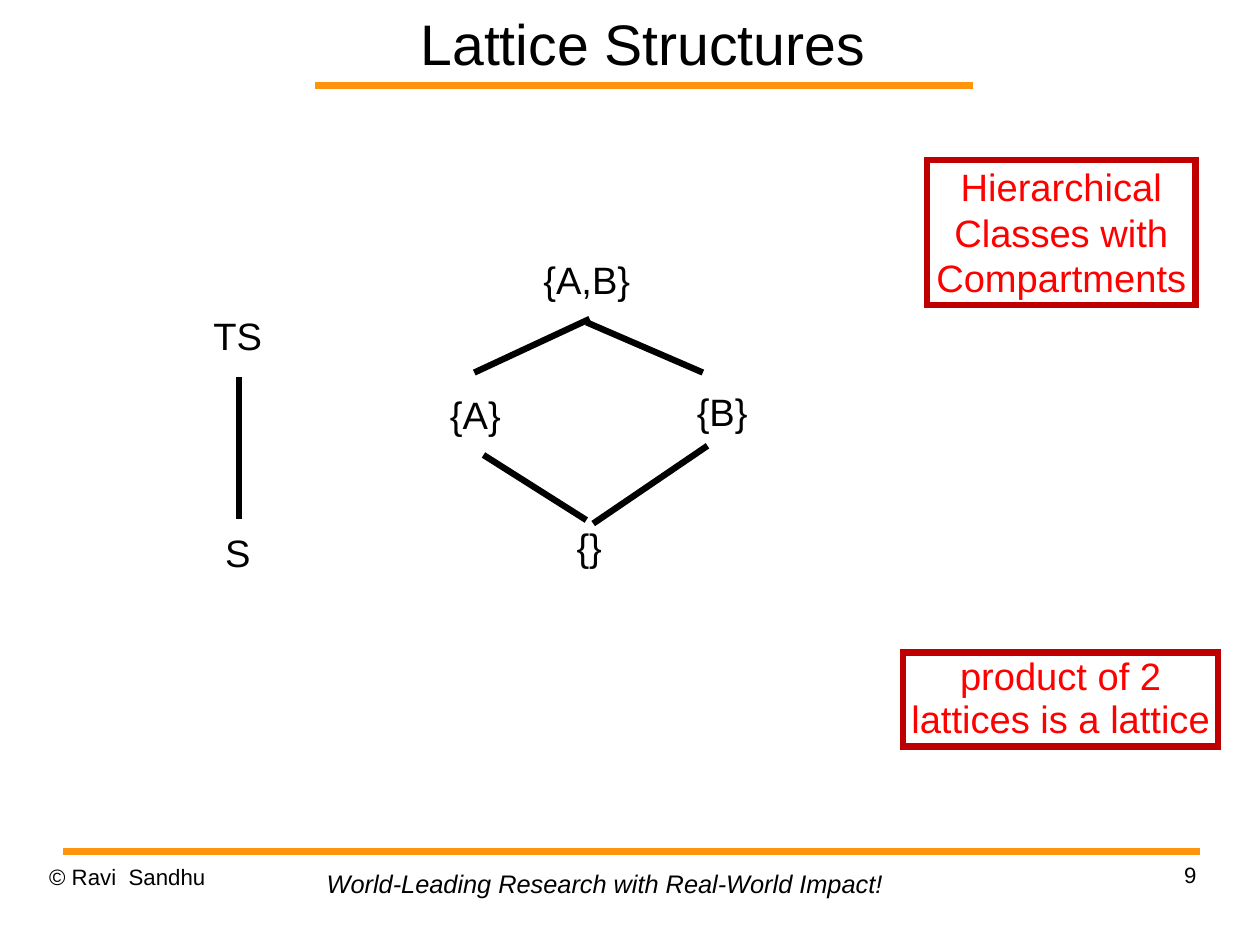
from lxml import etree
from pptx import Presentation, util as u
from pptx.dml.color import RGBColor
from pptx.enum import shapes, text
from pptx.oxml import ns

BLACK = RGBColor(0x00, 0x00, 0x00)
RED = RGBColor(0xFF, 0x00, 0x00)
DARK_RED = RGBColor(0xC0, 0x00, 0x00)
ORANGE = RGBColor(0xFF, 0x95, 0x0E)
LEFT, CENTER, RIGHT = text.PP_ALIGN.LEFT, text.PP_ALIGN.CENTER, text.PP_ALIGN.RIGHT

# Content: all lengths in points
SLIDE_SIZE = (793.75, 595.25)
TITLE = "Lattice Structures"
RULES = [((198.72, 54), (612.72, 54)), ((39.6, 536.4), (756, 536.4))]
FOOTERS = [  # text, box, format
    ("© Ravi  Sandhu", (31, 543.6, 185, 41), dict(size=14, spacing=1.01)),
    ("9", (568.8, 542.2, 185, 41), dict(size=14, spacing=1.01, align=RIGHT)),
    ("World-Leading Research with Real-World Impact!", (198.72, 543.6, 365.76, 26.6),
     dict(size=16, italic=True, insets=(7.2, 3.6), wrap=False)),
]
NODES = [  # label, centre, width
    ("TS", (149.8, 215.3), 44.6),
    ("S", (149.8, 352.1), 30.2),
    ("{A,B}", (369.7, 180), 74.2),
    ("{}", (371.2, 348.5), 32.4),
    ("{A}", (299.5, 265), 50.4),
    ("{B}", (455, 263.5), 50.4),
]
NODE_HEIGHT = 33.12
EDGES = [
    ((150.5, 237.6), (150.5, 326.9)),
    ((371.5, 200.9), (298.8, 234.7)),
    ((369.4, 203), (442.8, 234.7)),
    ((304.6, 286.6), (369.4, 327.6)),
    ((373.7, 329.8), (445.7, 280.8)),
]
NOTES = [  # text, box, line spacing, wrap
    ("Hierarchical\nClasses with\nCompartments", (583.92, 100.8, 169.2, 91.44), 1.0, False),
    ("product of 2 lattices is a lattice", (568.8, 411.12, 198.72, 59.04), 0.94, True),
]


def points(values):
    return [u.Pt(value) for value in values]


def write_text(shape, content, *, size, color=BLACK, align=LEFT, italic=False, spacing=1.0,
               insets=(0, 0), wrap=True, anchor=text.MSO_ANCHOR.TOP):
    frame = shape.text_frame
    frame.text = content
    frame.word_wrap = wrap
    frame.auto_size = text.MSO_AUTO_SIZE.NONE
    frame.vertical_anchor = anchor
    frame.margin_left = frame.margin_right = u.Pt(insets[0])
    frame.margin_top = frame.margin_bottom = u.Pt(insets[1])
    for paragraph in frame.paragraphs:
        paragraph.alignment = align
        paragraph.line_spacing = spacing
        paragraph.space_before = u.Pt(0)
        for run in paragraph.runs:
            run.font.name = "Arial"
            run.font.size = u.Pt(size)
            run.font.italic = italic
            run.font.color.rgb = color


def add_line(slide, start, end, color, width):
    line = slide.shapes.add_connector(shapes.MSO_CONNECTOR.STRAIGHT, *points(start + end))
    line.line.color.rgb = color
    line.line.width = u.Pt(width)
    etree.SubElement(line._element.spPr, ns.qn("a:effectLst"))


def main():
    presentation = Presentation()
    presentation.slide_width, presentation.slide_height = points(SLIDE_SIZE)
    slide = presentation.slides.add_slide(presentation.slide_layouts[5])

    # Title
    title = slide.shapes.title
    title.left, title.top, title.width, title.height = points((173.5, 0, 463, 54))
    write_text(title, TITLE, size=36, align=CENTER, anchor=text.MSO_ANCHOR.MIDDLE)

    # Orange rules and footers
    for start, end in RULES:
        add_line(slide, start, end, ORANGE, 4.31)
    for content, box, style in FOOTERS:
        write_text(slide.shapes.add_textbox(*points(box)), content, **style)

    # Lattices
    for label, (x, y), width in NODES:
        box = (x - width / 2, y - NODE_HEIGHT / 2, width, NODE_HEIGHT)
        write_text(slide.shapes.add_textbox(*points(box)), label, size=24, align=CENTER,
                   spacing=0.87, insets=(5, 2), wrap=False)
    for start, end in EDGES:
        add_line(slide, start, end, BLACK, 4)

    # Framed notes with square corners
    for content, box, spacing, wrap in NOTES:
        note = slide.shapes.add_shape(shapes.MSO_SHAPE.RECTANGLE, *points(box))
        note.shadow.inherit = False
        note.fill.background()
        note.line.color.rgb = DARK_RED
        note.line.width = u.Pt(4)
        etree.SubElement(note.line._get_or_add_ln(), ns.qn("a:miter"), lim="800000")
        write_text(note, content, size=24, color=RED, align=CENTER, spacing=spacing,
                   insets=(5, 2), wrap=wrap)

    presentation.save("out.pptx")


if __name__ == "__main__":
    main()
